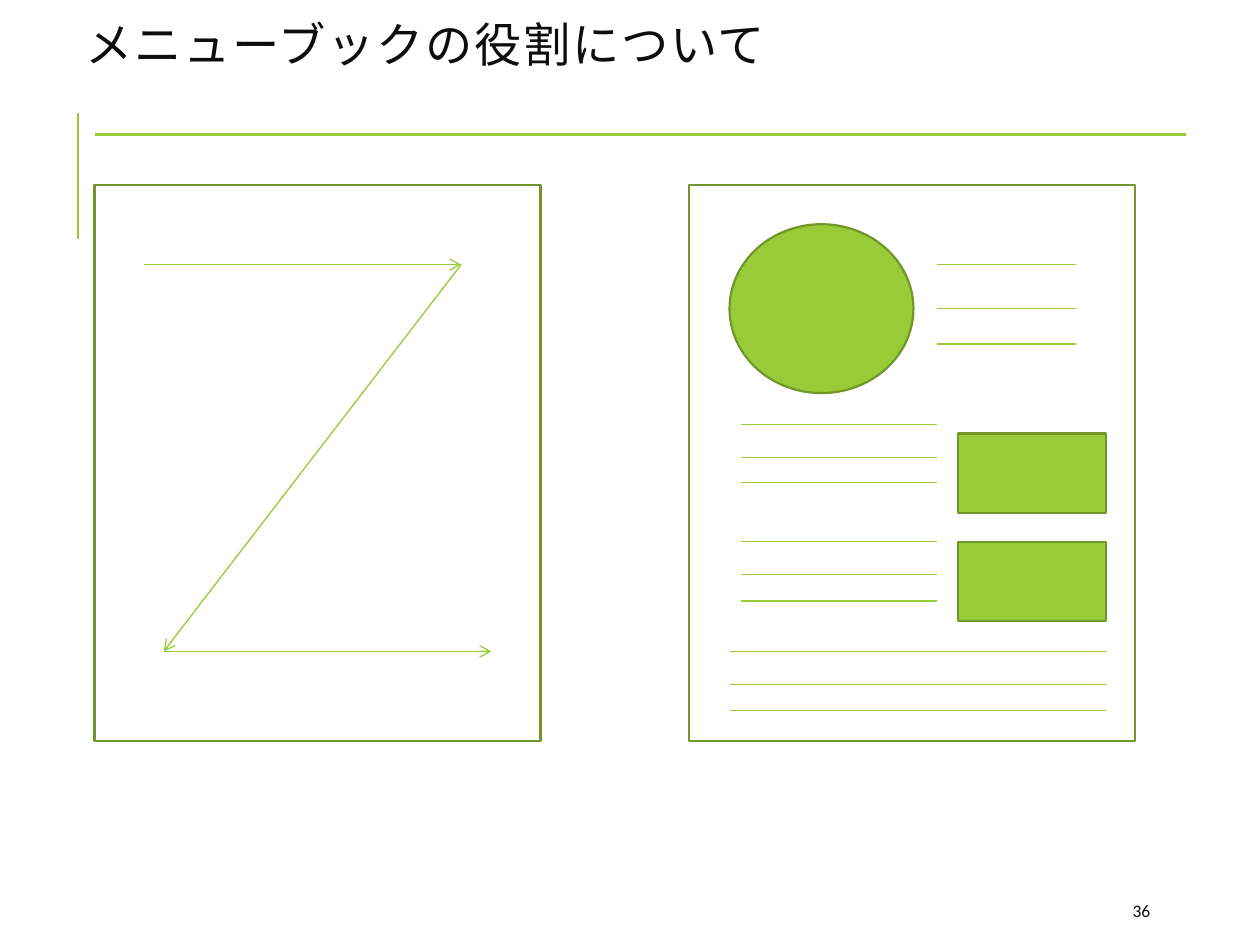
from lxml import etree
from pptx import Presentation
from pptx.dml.color import RGBColor
from pptx.enum.shapes import MSO_CONNECTOR, MSO_SHAPE
from pptx.enum.text import MSO_ANCHOR
from pptx.oxml.ns import qn
from pptx.util import Inches, Pt

STRAIGHT = MSO_CONNECTOR.STRAIGHT
RECTANGLE = MSO_SHAPE.RECTANGLE
OVAL = MSO_SHAPE.OVAL
MIDDLE = MSO_ANCHOR.MIDDLE

COLORS = {"green": "99CB38", "outline": "719629", "text": "0D0D0D"}
PAGE_TOP, PAGE_WIDTH, PAGE_HEIGHT = 1.47, 3.54, 4.41
Z_PATH = [(1.14, 2.1), (3.66, 2.1), (1.3, 5.17), (3.9, 5.17)]
TEXT_BLOCKS = [
    (7.44, 8.54, (2.1, 2.45, 2.73)),
    (5.88, 7.44, (3.37, 3.63, 3.83)),
    (5.88, 7.44, (4.3, 4.56, 4.77)),
    (5.79, 8.78, (5.17, 5.43, 5.64)),
]


def color(name):
    return RGBColor.from_string(COLORS[name])


def add_text(slide, text, box, *, size, font, line_spacing=None, tracking=0):
    label = slide.shapes.add_textbox(*map(Inches, box))
    frame = label.text_frame
    frame.word_wrap = True
    frame.vertical_anchor = MIDDLE
    paragraph = frame.paragraphs[0]
    paragraph.line_spacing = line_spacing
    run = paragraph.add_run()
    run.text = text
    run.font.size = Pt(size)
    run.font.name = font
    run.font.color.rgb = color("text")
    properties = run.font._element
    if tracking:
        properties.set("spc", str(tracking * 100))
    latin = properties.find(qn("a:latin"))
    east_asian = etree.Element(qn("a:ea"), typeface=font)
    latin.addnext(east_asian)


def add_line(shapes, start, end, width=0.75, arrow=False):
    line = shapes.add_connector(STRAIGHT, *map(Inches, (*start, *end)))
    line.line.color.rgb = color("green")
    line.line.width = Pt(width)
    if arrow:
        etree.SubElement(line.line._get_or_add_ln(), qn("a:tailEnd"), type="arrow")
    etree.SubElement(line._element.spPr, qn("a:effectLst"))


def add_figure(slide, kind, box, fill=None):
    figure = slide.shapes.add_shape(kind, *map(Inches, box))
    figure.shadow.inherit = False
    figure.line.color.rgb = color("outline")
    figure.line.width = Pt(1.25)
    if fill:
        figure.fill.solid()
        figure.fill.fore_color.rgb = color(fill)
    else:
        figure.fill.background()


def add_page(slide, left):
    add_figure(slide, RECTANGLE, (left, PAGE_TOP, PAGE_WIDTH, PAGE_HEIGHT))


def add_text_block(slide, left, right, heights):
    block = slide.shapes.add_group_shape()
    for y in heights:
        add_line(block.shapes, (left, y), (right, y))


def add_header(slide):
    add_line(slide.shapes, (0.62, 1.9), (0.62, 0.9), width=1.5)
    add_text(slide, "36", (8.89, 7.08, 0.8, 0.3), size=10, font="Calibri")
    add_line(slide.shapes, (0.75, 1.07), (9.41, 1.07), width=1.5)
    add_text(slide, "メニューブックの役割について", (0.58, -0.11, 9, 1),
             size=27, font="Noto Sans CJK JP", line_spacing=0.8, tracking=1)


def add_reading_path(slide):
    add_page(slide, 0.75)
    for start, end in zip(Z_PATH, Z_PATH[1:]):
        add_line(slide.shapes, start, end, arrow=True)


def add_menu_layout(slide):
    add_page(slide, 5.47)
    add_figure(slide, OVAL, (5.79, 1.78, 1.46, 1.34), fill="green")
    for photo_top in (3.44, 4.3):
        add_figure(slide, RECTANGLE, (7.6, photo_top, 1.18, 0.63), fill="green")
    for left, right, heights in TEXT_BLOCKS:
        add_text_block(slide, left, right, heights)


def main():
    presentation = Presentation()
    presentation.slide_width = Inches(10)
    presentation.slide_height = Inches(7.5)
    slide = presentation.slides.add_slide(presentation.slide_layouts[6])
    add_header(slide)
    add_reading_path(slide)
    add_menu_layout(slide)
    presentation.save("out.pptx")


if __name__ == "__main__":
    main()
